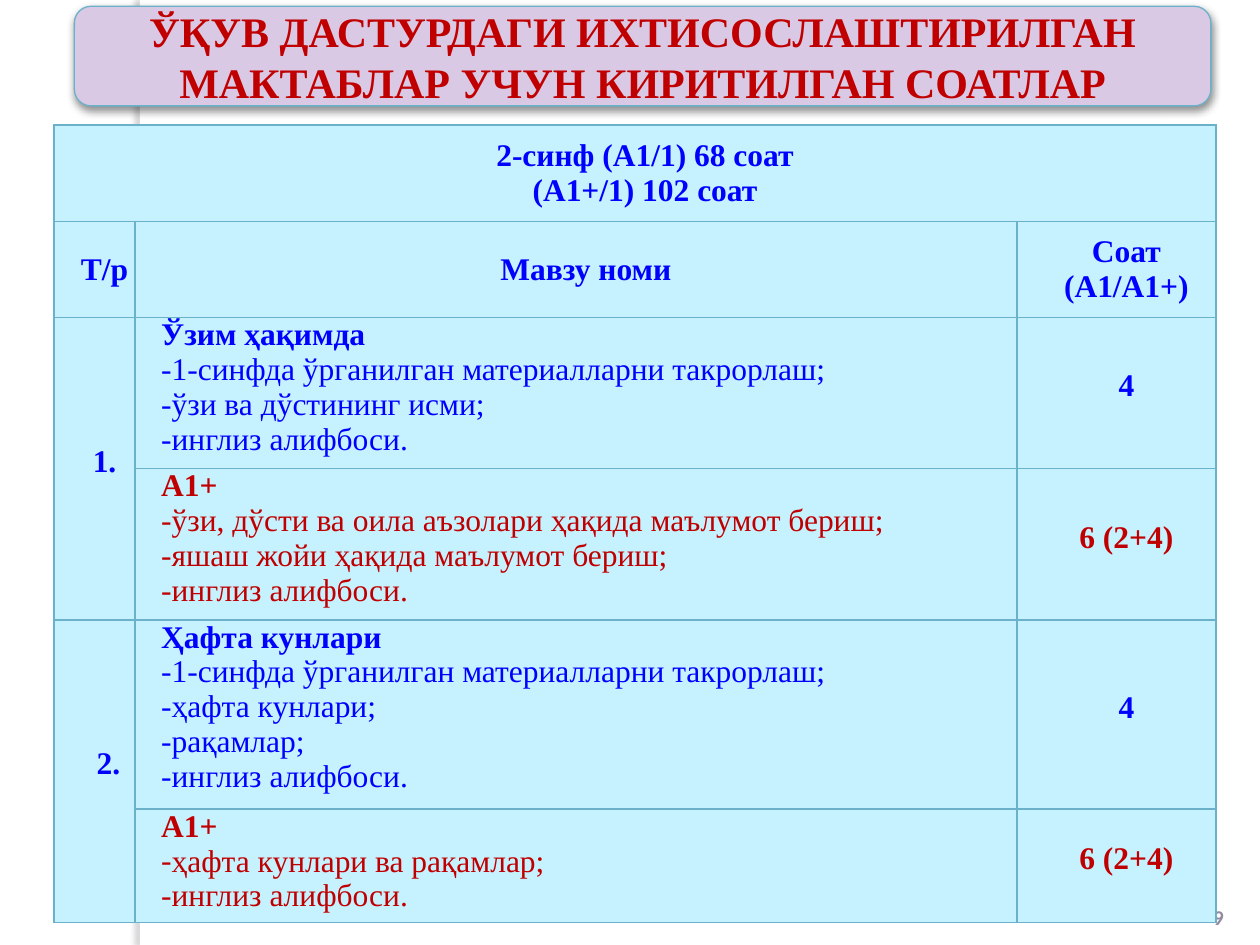
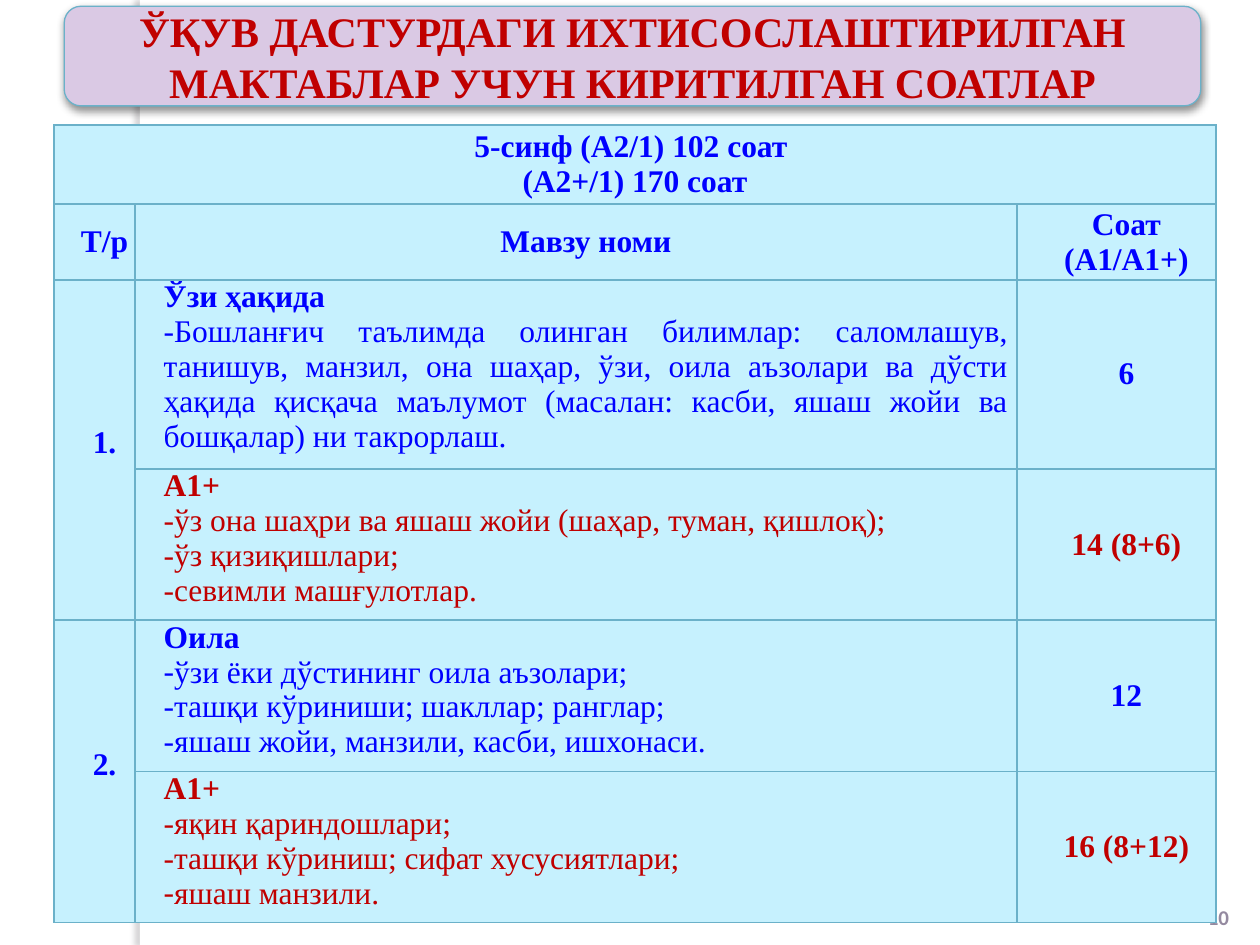
import pptx
import pptx.dml.color
import pptx.enum.shapes
import pptx.enum.text
import pptx.oxml
import pptx.oxml.ns
import pptx.util

Inches = pptx.util.Inches
Pt = pptx.util.Pt
RGBColor = pptx.dml.color.RGBColor
Align = pptx.enum.text.PP_ALIGN
Anchor = pptx.enum.text.MSO_ANCHOR
Shape = pptx.enum.shapes.MSO_SHAPE

WHITE = RGBColor(0xFF, 0xFF, 0xFF)
BLUE = RGBColor(0x00, 0x00, 0xFF)
RED = RGBColor(0xC0, 0x00, 0x00)
LILAC = RGBColor(0xDA, 0xC9, 0xE4)
TEAL = RGBColor(0x6B, 0xB1, 0xC9)
PALE_BLUE = RGBColor(0xC6, 0xF1, 0xFE)
GRAY = RGBColor(0x94, 0x8A, 0xA0)
BAND_SHADOW = RGBColor(0x64, 0x60, 0x68)
BLACK = RGBColor(0x00, 0x00, 0x00)
SERIF = "Times New Roman"

WIDTH, HEIGHT = Inches(10), Inches(7.5)
COLUMNS = [Inches(0.64), Inches(7), Inches(1.58)]
LINE = Inches(0.3)
INDENT = Inches(0.16)

TITLE = "ЎҚУВ ДАСТУРДАГИ ИХТИСОСЛАШТИРИЛГАН МАКТАБЛАР УЧУН КИРИТИЛГАН СОАТЛАР"
HEADINGS = ["Т/р", "Мавзу номи", "Соат (А1/А1+)"]

# Each topic row: number, heading, items, hours, height in text lines
LESSON_PLANS = [
    dict(
        page="9", title_left=0.059, header_heights=[0.77, 0.76],
        grade=["2-синф (А1/1) 68 соат", "(А1+/1) 102 соат"],
        grade_indent=INDENT, inset=0.05, hours_spacing=Pt(12),
        topics=[
            ("1.", "Ўзим ҳақимда",
             ["1-синфда ўрганилган материалларни такрорлаш;",
              "ўзи ва дўстининг исми;", "инглиз алифбоси."], "4", 4),
            ("", "А1+",
             ["ўзи, дўсти ва оила аъзолари ҳақида маълумот бериш;",
              "яшаш жойи ҳақида маълумот бериш;", "инглиз алифбоси."], "6 (2+4)", 4),
            (" 2.", "Ҳафта кунлари",
             ["1-синфда ўрганилган материалларни такрорлаш;",
              "ҳафта кунлари;", "рақамлар;", "инглиз алифбоси."], "4", 5),
            ("", "А1+",
             ["ҳафта кунлари ва рақамлар;", "инглиз алифбоси."], "6 (2+4)", 3),
        ]),
    dict(
        page="10", title_left=0.051, header_heights=[0.63, 0.6],
        grade=["5-синф (А2/1) 102 соат ", "(А2+/1) 170 соат"],
        grade_indent=0, inset=0.07, hours_spacing=None,
        topics=[
            ("1.", "Ўзи ҳақида",
             ["Бошланғич таълимда олинган билимлар: саломлашув, танишув, манзил, "
              "она шаҳар, ўзи, оила аъзолари ва дўсти ҳақида қисқача маълумот "
              "(масалан: касби, яшаш жойи ва бошқалар) ни такрорлаш."], "6", 5),
            ("", "А1+",
             ["ўз она шаҳри ва яшаш жойи (шаҳар, туман, қишлоқ);",
              "ўз қизиқишлари;", "севимли машғулотлар."], "14 (8+6)", 4),
            ("2.", "Оила",
             ["ўзи ёки дўстининг оила аъзолари;",
              "ташқи кўриниши; шакллар; ранглар;",
              "яшаш жойи, манзили, касби, ишхонаси."], "12", 4),
            ("", "А1+",
             ["яқин қариндошлари;", "ташқи кўриниш; сифат хусусиятлари;",
              "яшаш манзили."], "16 (8+12)", 4),
        ]),
]


def write_text(frame, lines, size=18, color=BLUE, font=SERIF, bold=True,
               align=Align.CENTER, indent=0, spacing=None, bulleted=False):
    """Fill a text frame; with bulleted, lines after the first are plain dash items."""
    for index, line in enumerate(lines):
        paragraph = frame.add_paragraph() if index else frame.paragraphs[0]
        paragraph.alignment = align
        if spacing:
            paragraph.line_spacing = spacing
        properties = paragraph._p.get_or_add_pPr()
        properties.set("marL", str(int(indent)))
        properties.set("indent", "0")
        is_item = bulleted and index > 0
        if is_item:
            for bullet in (f'buFont {{}} typeface="{font}"', 'buChar {} char="-"'):
                properties.append(pptx.oxml.parse_xml(
                    f'<a:{bullet.format(pptx.oxml.ns.nsdecls("a"))}/>'))
        run = paragraph.add_run()
        run.text = line
        run.font.name = font
        run.font.size = Pt(size)
        run.font.bold = bold and not is_item
        run.font.color.rgb = color


def add_shadow(shape, color, opacity, blur, distance, angle):
    shape.shadow.inherit = False
    effects = shape._element.spPr.find(pptx.oxml.ns.qn("a:effectLst"))
    effects.append(pptx.oxml.parse_xml(
        f'<a:outerShdw {pptx.oxml.ns.nsdecls("a")} blurRad="{Pt(blur)}" '
        f'dist="{Pt(distance)}" dir="{angle * 60000}" algn="ctr" rotWithShape="0">'
        f'<a:srgbClr val="{color}"><a:alpha val="{opacity * 1000}"/></a:srgbClr>'
        '</a:outerShdw>'))


presentation = pptx.Presentation()
presentation.slide_width, presentation.slide_height = WIDTH, HEIGHT

for plan in LESSON_PLANS:
    slide = presentation.slides.add_slide(presentation.slide_layouts[6])

    band = slide.shapes.add_shape(
        Shape.RECTANGLE, int(WIDTH * 0.111), 0, int(WIDTH * 0.008), HEIGHT)
    band.fill.solid()
    band.fill.fore_color.rgb = WHITE
    band.line.fill.background()
    add_shadow(band, BAND_SHADOW, opacity=25, blur=3, distance=3, angle=180)

    page_number = slide.shapes.add_textbox(
        int(WIDTH * 0.942), int(HEIGHT * 0.92), int(WIDTH * 0.05), int(HEIGHT * 0.07))
    page_number.text_frame.word_wrap = True
    page_number.text_frame.vertical_anchor = Anchor.BOTTOM
    write_text(page_number.text_frame, [plan["page"]],
               size=12, color=GRAY, font="Calibri")

    title = slide.shapes.add_shape(
        Shape.ROUNDED_RECTANGLE, int(WIDTH * plan["title_left"]), Inches(0.05),
        int(WIDTH * 0.902), Inches(0.79))
    title.fill.solid()
    title.fill.fore_color.rgb = LILAC
    title.line.color.rgb = TEAL
    title.line.width = Pt(0.75)
    add_shadow(title, BLACK, opacity=43, blur=5, distance=2, angle=90)
    title.text_frame.word_wrap = True
    title.text_frame.vertical_anchor = Anchor.MIDDLE
    write_text(title.text_frame, [TITLE], size=24, color=RED)

    heights = [Inches(height) for height in plan["header_heights"]]
    heights += [LINE * topic[-1] for topic in plan["topics"]]
    table = slide.shapes.add_table(
        len(heights), len(COLUMNS), int(WIDTH * 0.043), int(HEIGHT * 0.132),
        sum(COLUMNS), sum(heights)).table
    table.first_row = table.horz_banding = False
    for column, width in zip(table.columns, COLUMNS):
        column.width = width
    for row, height in zip(table.rows, heights):
        row.height = height

    for cell in table.iter_cells():
        cell.margin_left = cell.margin_right = Inches(0.05)
        cell.margin_top = cell.margin_bottom = 0
        cell.vertical_anchor = Anchor.MIDDLE
        for side in ("lnL", "lnR", "lnT", "lnB"):
            cell._tc.get_or_add_tcPr().append(pptx.oxml.parse_xml(
                f'<a:{side} {pptx.oxml.ns.nsdecls("a")} w="{Pt(1)}"><a:solidFill>'
                f'<a:srgbClr val="{TEAL}"/></a:solidFill></a:{side}>'))
        cell.fill.solid()
        cell.fill.fore_color.rgb = PALE_BLUE

    table.cell(0, 0).merge(table.cell(0, 2))
    write_text(table.cell(0, 0).text_frame, plan["grade"], indent=plan["grade_indent"])
    for column, heading in enumerate(HEADINGS):
        write_text(table.cell(1, column).text_frame, [heading], indent=INDENT)

    for row, (number, heading, items, hours, _) in enumerate(plan["topics"], start=2):
        color = BLUE if number else RED
        number_cell, topic_cell, hours_cell = (table.cell(row, i) for i in range(3))
        if number:
            number_cell.merge(table.cell(row + 1, 0))
            write_text(number_cell.text_frame, [number], indent=INDENT, spacing=Pt(12))
        for cell in (topic_cell, hours_cell):
            cell.margin_left = cell.margin_right = Inches(plan["inset"])
        topic_cell.vertical_anchor = Anchor.TOP
        write_text(topic_cell.text_frame, [heading, *items], color=color,
                   align=Align.JUSTIFY, indent=INDENT, bulleted=True)
        write_text(hours_cell.text_frame, [hours], color=color, indent=INDENT,
                   spacing=plan["hours_spacing"])

presentation.save("out.pptx")
